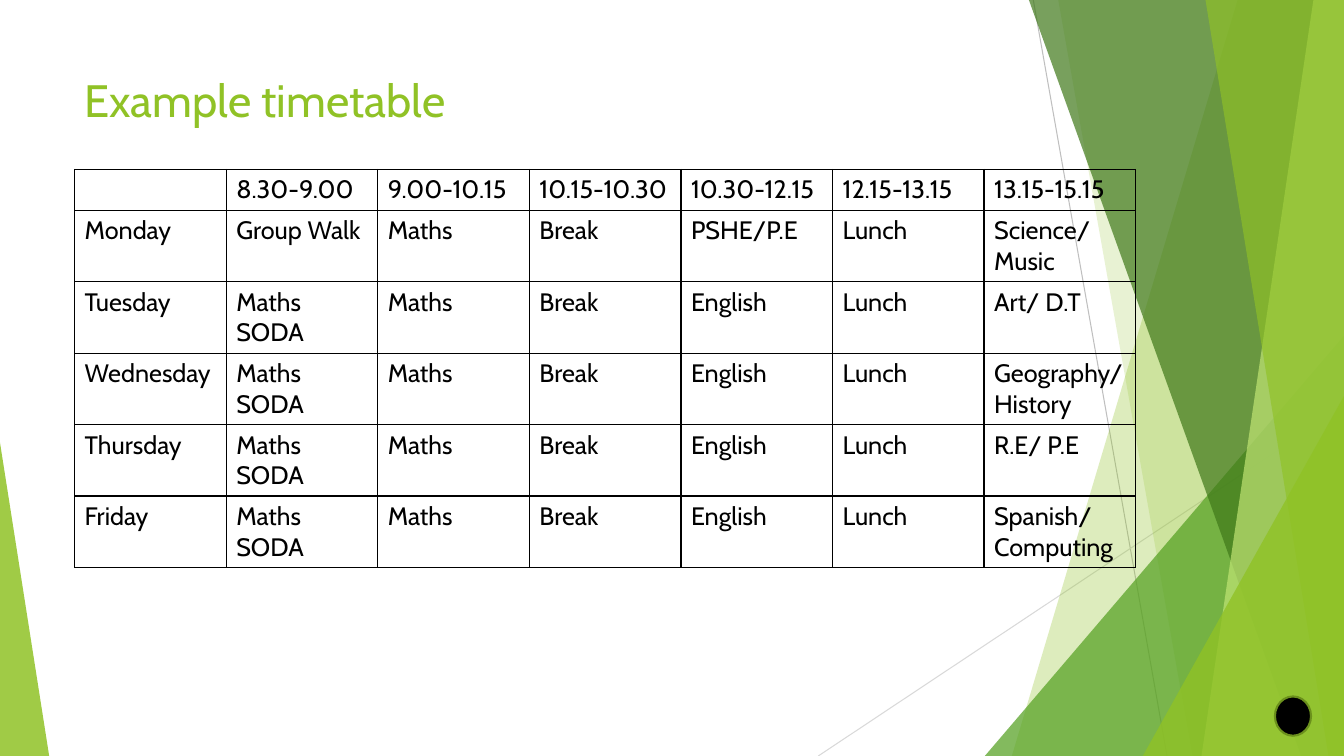
from dataclasses import dataclass

from lxml import etree
from pptx import Presentation
from pptx.dml.color import RGBColor
from pptx.enum.shapes import MSO_CONNECTOR, MSO_SHAPE
from pptx.oxml.ns import qn
from pptx.util import Cm, Pt

STRAIGHT = MSO_CONNECTOR.STRAIGHT
TRIANGLE = MSO_SHAPE.ISOSCELES_TRIANGLE
OVAL = MSO_SHAPE.OVAL


@dataclass(frozen=True)
class Theme:
    font: str = "Cabin"
    title_size: float = 32.4
    table_size: float = 18
    green: str = "90C226"
    leaf: str = "54A021"
    forest: str = "3F7819"
    lime: str = "C0E474"
    olive: str = "6B901C"
    grey: str = "BFBFBF"
    pale_grey: str = "D9D9D9"
    black: str = "000000"


theme = Theme()
WIDTH, HEIGHT = 33.87, 19.05


def style_paragraph(paragraph, size, color):
    paragraph.font.name = theme.font
    paragraph.font.size = Pt(size)
    paragraph.font.color.rgb = RGBColor.from_string(color)


def add_cell_borders(cell, color, width):
    properties = cell._tc.get_or_add_tcPr()
    for side in ("a:lnL", "a:lnR", "a:lnT", "a:lnB"):
        line = etree.SubElement(properties, qn(side), w=str(Pt(width)))
        fill = etree.SubElement(line, qn("a:solidFill"))
        etree.SubElement(fill, qn("a:srgbClr"), val=color)


presentation = Presentation()
presentation.slide_width = Cm(WIDTH)
presentation.slide_height = Cm(HEIGHT)
slide = presentation.slides.add_slide(presentation.slide_layouts[6])

# Thin background lines
for start_x, start_y, end_x, color in (
    (26.04, 0, 29.41, theme.grey),
    (WIDTH, 10.24, 20.62, theme.pale_grey),
):
    connector = slide.shapes.add_connector(
        STRAIGHT, Cm(start_x), Cm(start_y), Cm(end_x), Cm(HEIGHT)
    )
    connector.line.color.rgb = RGBColor.from_string(color)
    connector.line.width = Pt(0.75)
    etree.SubElement(connector._element.spPr, qn("a:effectLst"))

# Translucent facets, back to front. A band is (top x, bottom x) and reaches
# the right edge; a triangle is (left, top, width, apex) and stands on the bottom.
facets = (
    ((31.19, 25.5), theme.green, 30),
    ((26.67, 30.05), theme.green, 20),
    ((24.82, 8.46, 9.05, 1), theme.leaf, 72),
    ((25.93, 32.79), theme.forest, 70),
    ((33.1, 30.28), theme.lime, 70),
    ((30.38, 33.48), theme.green, 65),
    ((28.8, 9.98, 5.07, 1), theme.green, 80),
    ((0, 11.15, 1.24, 0), theme.green, 85),
)
for outline, color, opacity in facets:
    if len(outline) == 2:
        top_x, bottom_x = outline
        builder = slide.shapes.build_freeform(Cm(top_x), 0)
        builder.add_line_segments(
            [(Cm(WIDTH), 0), (Cm(WIDTH), Cm(HEIGHT)), (Cm(bottom_x), Cm(HEIGHT))]
        )
        facet = builder.convert_to_shape()
    else:
        left, top, width, apex = outline
        facet = slide.shapes.add_shape(
            TRIANGLE, Cm(left), Cm(top), Cm(width), Cm(HEIGHT - top)
        )
        facet.adjustments[0] = apex
    facet.shadow.inherit = False
    facet.line.fill.background()
    facet.fill.solid()
    facet.fill.fore_color.rgb = RGBColor.from_string(color)
    color_element = facet._element.spPr.find(qn("a:solidFill"))[0]
    etree.SubElement(color_element, qn("a:alpha"), val=str(opacity * 1000))

# Title
title = slide.shapes.add_textbox(Cm(1.88), Cm(1.7), Cm(23.88), Cm(3.66))
title.text_frame.word_wrap = True
title.text_frame.text = "Example timetable"
style_paragraph(title.text_frame.paragraphs[0], theme.title_size, theme.green)

# Timetable
times = ("", "8.30-9.00", "9.00-10.15", "10.15-10.30",
         "10.30-12.15", "12.15-13.15", "13.15-15.15")
days = (
    ("Monday", "Group Walk", "PSHE/P.E", "Science/ Music"),
    ("Tuesday", "Maths SODA", "English", "Art/ D.T"),
    ("Wednesday", "Maths SODA", "English", "Geography/History"),
    ("Thursday", "Maths SODA", "English", "R.E/ P.E"),
    ("Friday", "Maths SODA", "English", "Spanish/ Computing"),
)
rows = [times] + [
    (day, first, "Maths", "Break", late_morning, "Lunch", afternoon)
    for day, first, late_morning, afternoon in days
]
HEADER_HEIGHT, DAY_HEIGHT, COLUMN_WIDTH = 1.03, 1.8, 3.82
table = slide.shapes.add_table(
    len(rows), len(times), Cm(1.88), Cm(4.27),
    Cm(COLUMN_WIDTH * len(times)), Cm(HEADER_HEIGHT + DAY_HEIGHT * len(days)),
).table
table.first_row = False
table.horz_banding = False
for column in table.columns:
    column.width = Cm(COLUMN_WIDTH)
for row_index, texts in enumerate(rows):
    table.rows[row_index].height = Cm(DAY_HEIGHT if row_index else HEADER_HEIGHT)
    for column_index, text in enumerate(texts):
        cell = table.cell(row_index, column_index)
        cell.text = text
        style_paragraph(cell.text_frame.paragraphs[0], theme.table_size, theme.black)
        add_cell_borders(cell, theme.black, 1)
        cell.fill.background()

# Corner dot
dot = slide.shapes.add_shape(OVAL, Cm(32.13), Cm(17.55), Cm(0.91), Cm(0.99))
dot.shadow.inherit = False
dot.fill.solid()
dot.fill.fore_color.rgb = RGBColor.from_string(theme.black)
dot.line.color.rgb = RGBColor.from_string(theme.olive)
dot.line.width = Pt(1.5)

presentation.save("out.pptx")
